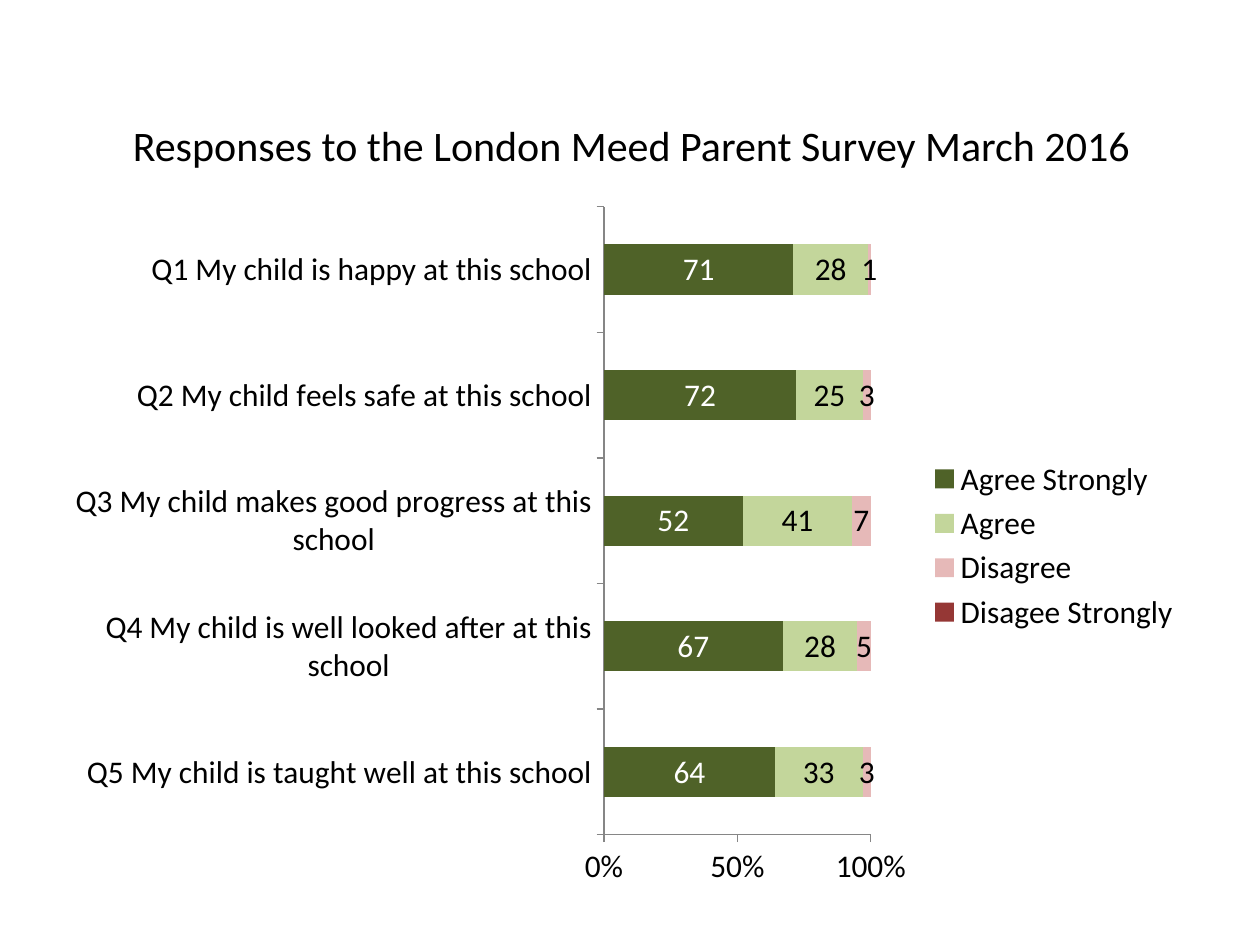
from dataclasses import dataclass
from typing import Optional

from lxml import etree
from pptx import Presentation
from pptx.chart.chart import Chart
from pptx.chart.data import CategoryChartData
from pptx.dml.color import RGBColor
from pptx.enum.chart import XL_CHART_TYPE, XL_LEGEND_POSITION, XL_TICK_MARK
from pptx.enum.text import MSO_ANCHOR, PP_ALIGN
from pptx.oxml.ns import qn
from pptx.util import Inches, Pt

STACKED_BAR = XL_CHART_TYPE.BAR_STACKED_100
LEGEND_RIGHT = XL_LEGEND_POSITION.RIGHT
TICK_OUTSIDE, TICK_NONE = XL_TICK_MARK.OUTSIDE, XL_TICK_MARK.NONE
MIDDLE = MSO_ANCHOR.MIDDLE
ALIGN_RIGHT = PP_ALIGN.RIGHT
TITLE_ONLY_LAYOUT = 5


@dataclass(frozen=True)
class Theme:
    font: str = "Calibri"
    text: str = "000000"
    light_text: str = "FFFFFF"
    axis: str = "868686"
    title_size: int = 24
    chart_size: int = 18


@dataclass(frozen=True)
class Answer:
    name: str
    color: str
    percentages: tuple[Optional[int], ...]
    label_color: str


THEME = Theme()
TITLE = "Responses to the London Meed Parent Survey March 2016"
QUESTIONS = (
    "Q5 My child is taught well at this school",
    "Q4 My child is well looked after at this school",
    "Q3 My child makes good progress at this school",
    "Q2 My child feels safe at this school",
    "Q1 My child is happy at this school",
)
ANSWERS = (
    Answer("Agree Strongly", "4F6228", (64, 67, 52, 72, 71), THEME.light_text),
    Answer("Agree", "C3D69B", (33, 28, 41, 25, 28), THEME.text),
    Answer("Disagree", "E6B9B8", (3, 5, 7, 3, 1), THEME.text),
    Answer("Disagee Strongly", "953735", (None,) * len(QUESTIONS), THEME.text),
)
PLOT_AREA = {"x": 0.47, "y": 0.02, "w": 0.24, "h": 0.89}


def apply_format(target, values: dict) -> None:
    for name, value in values.items():
        setattr(target, name, value)


def style_font(font, size: int, color: str) -> None:
    apply_format(font, {"name": THEME.font, "size": Pt(size), "bold": False})
    font.color.rgb = RGBColor.from_string(color)


def add_title(page) -> None:
    title = page.shapes.title
    apply_format(title, {
        "left": Inches(0.84), "top": Inches(0.9),
        "width": Inches(8.23), "height": Inches(0.5),
    })
    frame = title.text_frame
    apply_format(frame, {"text": TITLE, "word_wrap": False, "vertical_anchor": MIDDLE})
    para = frame.paragraphs[0]
    para.alignment = ALIGN_RIGHT
    style_font(para.runs[0].font, THEME.title_size, THEME.text)


def place_plot_area(chart: Chart, fractions: dict[str, float]) -> None:
    """Fix the inner plot area as fractions of the chart frame."""
    plot_area = chart.element.find(f".//{qn('c:plotArea')}")
    for old_layout in plot_area.findall(qn("c:layout")):
        plot_area.remove(old_layout)
    layout = etree.Element(qn("c:layout"))
    manual = etree.SubElement(layout, qn("c:manualLayout"))
    settings = {"layoutTarget": "inner", "xMode": "edge", "yMode": "edge", **fractions}
    for name, value in settings.items():
        etree.SubElement(manual, qn(f"c:{name}")).set("val", str(value))
    plot_area.insert(0, layout)


def style_axes(chart: Chart) -> None:
    for axis in (chart.category_axis, chart.value_axis):
        apply_format(axis, {
            "has_major_gridlines": False,
            "major_tick_mark": TICK_OUTSIDE,
            "minor_tick_mark": TICK_NONE,
        })
        axis.format.line.color.rgb = RGBColor.from_string(THEME.axis)
        axis.format.line.width = Pt(0.75)
    apply_format(chart.value_axis, {
        "minimum_scale": 0, "maximum_scale": 1, "major_unit": 0.5,
    })
    apply_format(chart.value_axis.tick_labels, {
        "number_format": "0%", "number_format_is_linked": False,
    })


def style_answer(series, answer: Answer) -> None:
    series.format.fill.solid()
    series.format.fill.fore_color.rgb = RGBColor.from_string(answer.color)
    labels = series.data_labels
    labels.show_value = True
    style_font(labels.font, THEME.chart_size, answer.label_color)


def add_survey_chart(page) -> None:
    survey = CategoryChartData()
    survey.categories = QUESTIONS
    for answer in ANSWERS:
        survey.add_series(answer.name, answer.percentages)
    chart = page.shapes.add_chart(
        STACKED_BAR, Inches(0.6), Inches(1.53), Inches(8.87), Inches(5.6), survey
    ).chart
    apply_format(chart, {"has_title": False, "has_legend": True})
    style_font(chart.font, THEME.chart_size, THEME.text)
    apply_format(chart.legend, {"position": LEGEND_RIGHT, "include_in_layout": False})
    plot = chart.plots[0]
    apply_format(plot, {"gap_width": 150, "overlap": 100, "vary_by_categories": False})
    for series, answer in zip(plot.series, ANSWERS):
        style_answer(series, answer)
    style_axes(chart)
    place_plot_area(chart, PLOT_AREA)


def main() -> None:
    deck = Presentation()
    apply_format(deck, {"slide_width": Inches(10), "slide_height": Inches(7.5)})
    page = deck.slides.add_slide(deck.slide_layouts[TITLE_ONLY_LAYOUT])
    add_survey_chart(page)
    add_title(page)
    deck.save("out.pptx")


if __name__ == "__main__":
    main()
